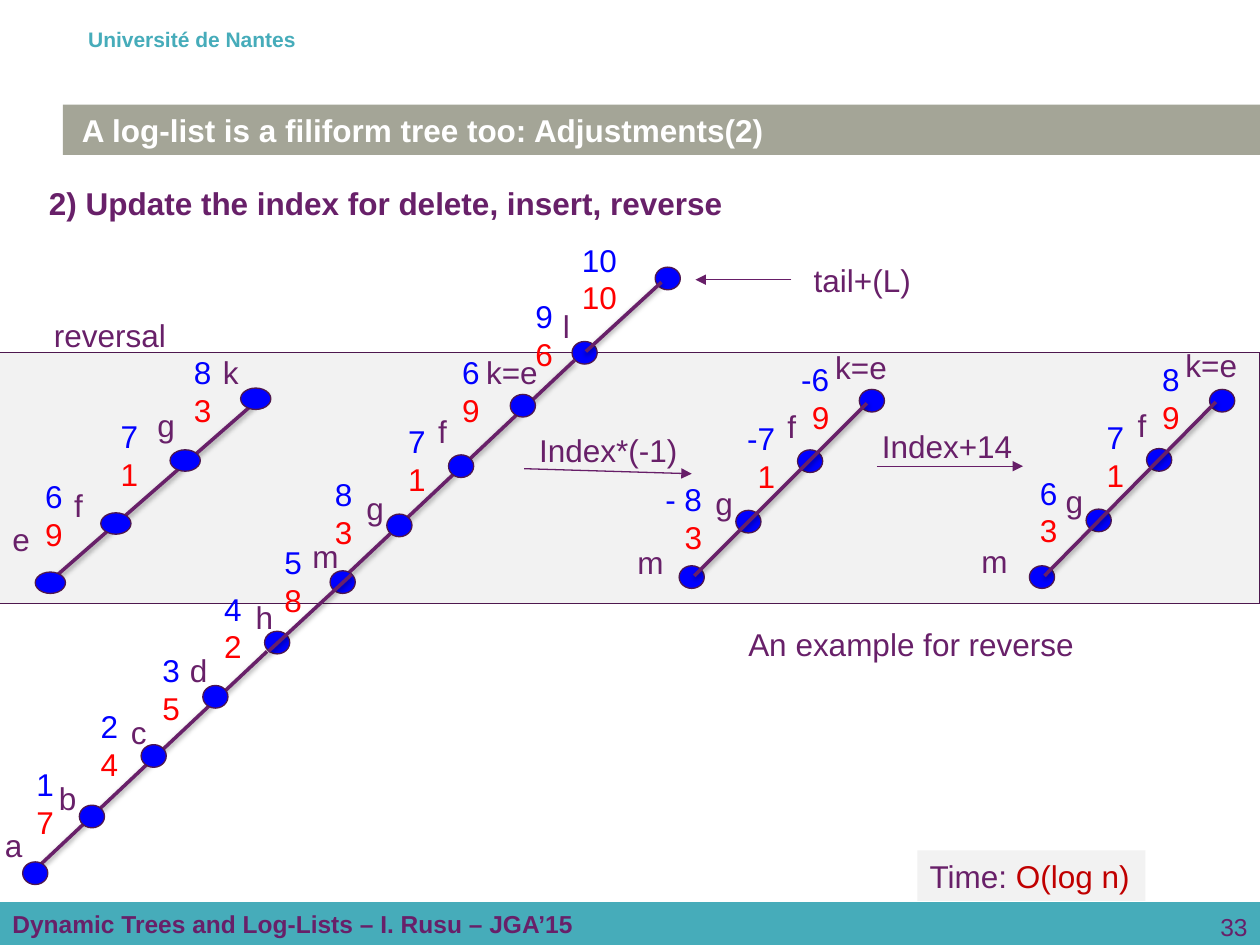
from lxml import etree
from pptx import Presentation
from pptx.dml.color import RGBColor
from pptx.enum.shapes import MSO_CONNECTOR, MSO_SHAPE
from pptx.enum.text import MSO_ANCHOR, PP_ALIGN
from pptx.oxml import parse_xml
from pptx.oxml.ns import nsdecls, qn
from pptx.util import Inches, Pt

PLUM, BLUE, RED = "682069", "0000FF", "FF0000"
DARK, TEAL, GREY, WHITE = "4E184F", "46ACBA", "F2F2F2", "FFFFFF"
SHADOW = (
    f'<a:effectLst {nsdecls("a")}><a:outerShdw blurRad="39370" dist="20320" '
    'dir="5400000" rotWithShape="0"><a:srgbClr val="000000">'
    '<a:alpha val="38000"/></a:srgbClr></a:outerShdw></a:effectLst>'
)
rgb = RGBColor.from_string

prs = Presentation()
prs.slide_width, prs.slide_height = Inches(10), Inches(7.5)
shapes = prs.slides.add_slide(prs.slide_layouts[6]).shapes


def write(x, y, w, h, *lines, fill=None, size=18, bold=False, right=False, inset=0.1):
    """Place a box; each line is a list of (text, colour) runs."""
    box = [Inches(v) for v in (x, y, w, h)]
    if fill:
        shape = shapes.add_shape(MSO_SHAPE.RECTANGLE, *box)
        shape.shadow.inherit = False
        shape.fill.solid()
        shape.fill.fore_color.rgb = rgb(fill)
        shape.line.fill.background()
    else:
        shape = shapes.add_textbox(*box)
    frame = shape.text_frame
    frame.word_wrap = True
    frame.vertical_anchor = MSO_ANCHOR.MIDDLE if fill else MSO_ANCHOR.TOP
    frame.margin_left = Inches(0 if right else inset)
    frame.margin_right = Inches(inset if right else 0)
    for i, line in enumerate(lines):
        para = frame.add_paragraph() if i else frame.paragraphs[0]
        para.alignment = PP_ALIGN.RIGHT if right else PP_ALIGN.LEFT
        for text, color in line:
            run = para.add_run()
            run.text = text
            run.font.name = "Arial"
            run.font.size = Pt(size)
            run.font.bold = bold
            run.font.color.rgb = rgb(color)
    return shape


def draw(x1, y1, x2, y2, arrow=False):
    """Draw a thick tree edge with a shadow, or a thin arrow."""
    ends = [Inches(v) for v in (x1, y1, x2, y2)]
    line = shapes.add_connector(MSO_CONNECTOR.STRAIGHT, *ends)
    line.line.color.rgb = rgb("671E68" if arrow else PLUM)
    line.line.width = Pt(0.75 if arrow else 2)
    props = line._element.spPr
    if arrow:
        etree.SubElement(line.line._get_or_add_ln(), qn("a:tailEnd"), type="triangle")
        etree.SubElement(props, qn("a:effectLst"))
    else:
        props.append(parse_xml(SHADOW))


# Header, footer and page number
write(0, 0.16, 10, 0.3, [("Université de Nantes", TEAL)], size=12, bold=True, inset=0.7)
write(0, 7.16, 10, 0.34, [("Dynamic Trees and Log-Lists – I. Rusu – JGA’15", PLUM)],
      fill=TEAL, size=14, bold=True)
write(7.67, 7.19, 2.33, 0.31, [("33", PLUM)], size=14, right=True)

# Band behind the reversed part
band = write(-0.01, 2.8, 10.01, 1.99, fill=GREY)
band.line.color.rgb = rgb(DARK)
band.line.width = Pt(0.75)

# Title and heading
write(0.5, 0.83, 9.5, 0.4, [("A log-list is a filiform tree too: Adjustments(2)", WHITE)],
      fill="A4A597", bold=True, inset=0.15)
write(0.29, 1.41, 5.6, 0.4,
      [("2) Update the index for delete, insert, reverse", PLUM)], bold=True)

# Edges behind the nodes
for edge in [(0.26, 6.92, 2.12, 5.17), (2.7, 4.61, 4.56, 2.86), (0.39, 4.62, 2.12, 3.11)]:
    draw(*edge)

# Nodes: size, then left and top of each
chains = [
    (0.2, 0.18, [(0.18, 6.84), (0.63, 6.39), (1.12, 5.91), (1.61, 5.44), (2.1, 5.01),
                 (2.62, 4.53), (3.07, 4.08), (3.56, 3.61), (4.05, 3.13), (4.54, 2.71),
                 (5.2, 2.12)]),
    (0.24, 0.17, [(0.28, 4.54), (0.8, 4.07), (1.35, 3.57), (1.91, 3.08)]),
    (0.2, 0.18, [(5.39, 4.49), (5.84, 4.05), (6.33, 3.57), (6.82, 3.09)]),
    (0.2, 0.18, [(8.17, 4.49), (8.62, 4.04), (9.1, 3.56), (9.6, 3.09)]),
]
for w, h, spots in chains:
    for x, y in spots:
        node = shapes.add_shape(MSO_SHAPE.OVAL, Inches(x), Inches(y), Inches(w), Inches(h))
        node.shadow.inherit = False
        node.fill.solid()
        node.fill.fore_color.rgb = rgb(BLUE)
        node.line.color.rgb = rgb(DARK)
        node.line.width = Pt(0.75)

# Edges in front of the nodes
for edge in [(2.13, 5.17, 2.79, 4.56), (4.65, 2.79, 5.25, 2.24),
             (5.51, 4.57, 6.88, 3.2), (8.29, 4.57, 9.65, 3.19)]:
    draw(*edge)

# Node names
names = [
    ("a", -0.06, 6.51), ("b", 0.37, 6.13), ("c", 0.94, 5.61), ("d", 1.41, 5.12),
    ("h", 1.93, 4.7), ("m", 2.38, 4.21), ("g", 2.81, 3.83), ("f", 3.38, 3.22),
    ("k=e", 3.76, 2.75), ("l", 4.37, 2.39),
    ("e", 0, 4.08), ("f", 0.49, 3.81), ("g", 1.15, 3.17), ("k", 1.67, 2.75),
    ("m", 4.96, 4.26), ("g", 5.58, 3.79), ("f", 6.15, 3.18), ("k=e", 6.53, 2.71),
    ("m", 7.69, 4.25), ("g", 8.36, 3.78), ("f", 8.93, 3.17), ("k=e", 9.31, 2.7),
]
widths = {"m": 0.41, "f": 0.27, "l": 0.26, "k=e": 0.62}
for name, x, y in names:
    write(x, y, widths.get(name, 0.34), 0.4, [(name, PLUM)])

# Index above value, left-aligned
pairs = [
    ("1", "7", 0.19, 6.02), ("2", "4", 0.7, 5.56), ("3", "5", 1.19, 5.12),
    ("4", "2", 1.68, 4.63), ("5", "8", 2.16, 4.26), ("8", "3", 2.56, 3.72),
    ("7", "1", 3.14, 3.3), ("6", "9", 3.57, 2.75), ("9", "6", 4.15, 2.31),
    ("10", "10", 4.52, 1.86),
    ("6", "9", 0.26, 3.74), ("7", "1", 0.86, 3.26), ("8", "3", 1.44, 2.75),
]
for index, value, x, y in pairs:
    write(x, y, 0.48 if index == "10" else 0.34, 0.71, [(index, BLUE)], [(value, RED)])

# Index above value, right-aligned
signed = [
    ("- 8", "3", 5.17, 3.76, 0.5), ("-7", "1", 5.82, 3.28, 0.43), ("-6", "9", 6.25, 2.81, 0.43),
    ("6", "3", 7.99, 3.71, 0.5), ("7", "1", 8.59, 3.27, 0.43), ("8", "9", 9.03, 2.81, 0.43),
]
for index, value, x, y, w in signed:
    write(x, y, w, 0.71, [(index, BLUE)], [(value, RED)], right=True)

# Arrows and notes
for arrow in [(6.28, 2.22, 5.52, 2.22), (4.16, 3.72, 5.49, 3.76), (6.96, 3.7, 8.12, 3.7)]:
    draw(*arrow, arrow=True)
notes = [
    ("tail+(L)", 6.36, 2.02, 0.98), ("reversal", 0.33, 2.46, 1.1),
    ("Index*(-1)", 4.18, 3.37, 1.31), ("Index+14", 6.9, 3.34, 1.25),
    ("An example for reverse", 5.84, 4.91, 2.81),
]
for note, x, y, w in notes:
    write(x, y, w, 0.4, [(note, PLUM)])
write(7.28, 6.75, 1.81, 0.4, [("Time: ", PLUM), ("O(log n)", "C00000")], fill=GREY)

prs.save("out.pptx")
